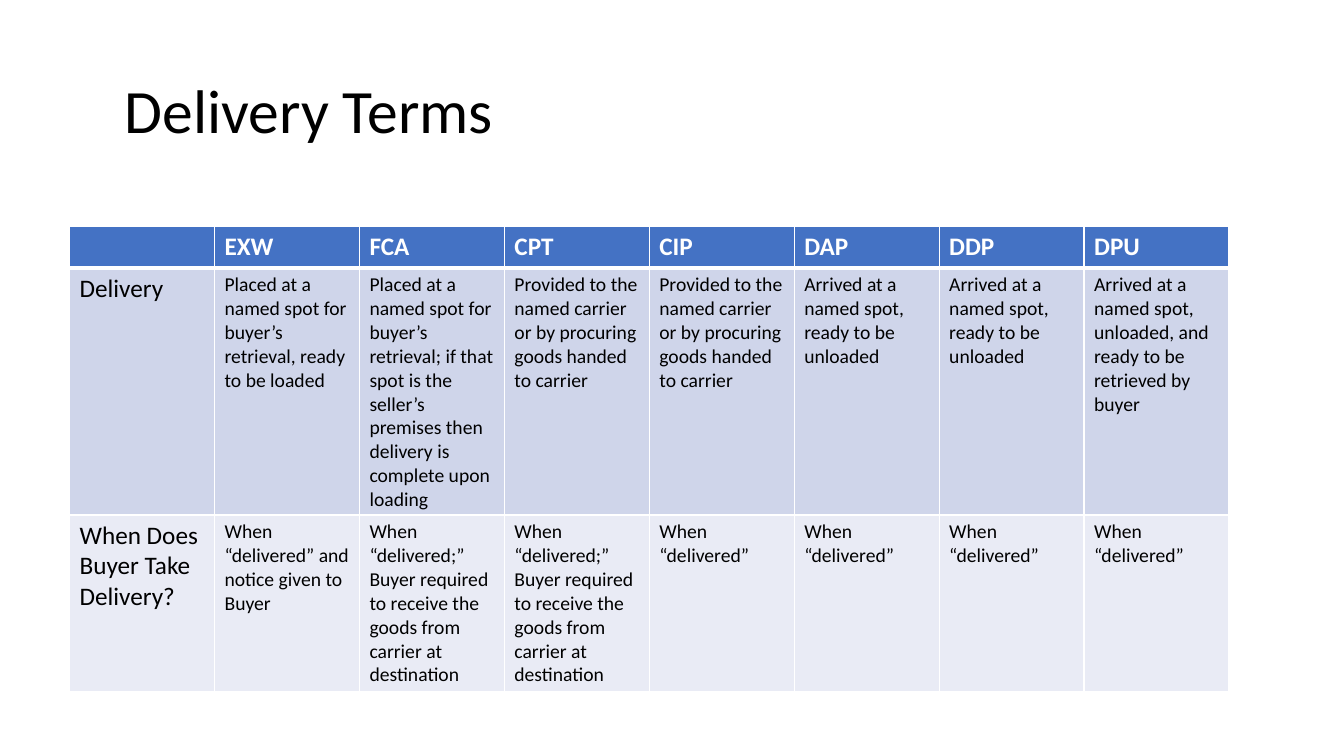
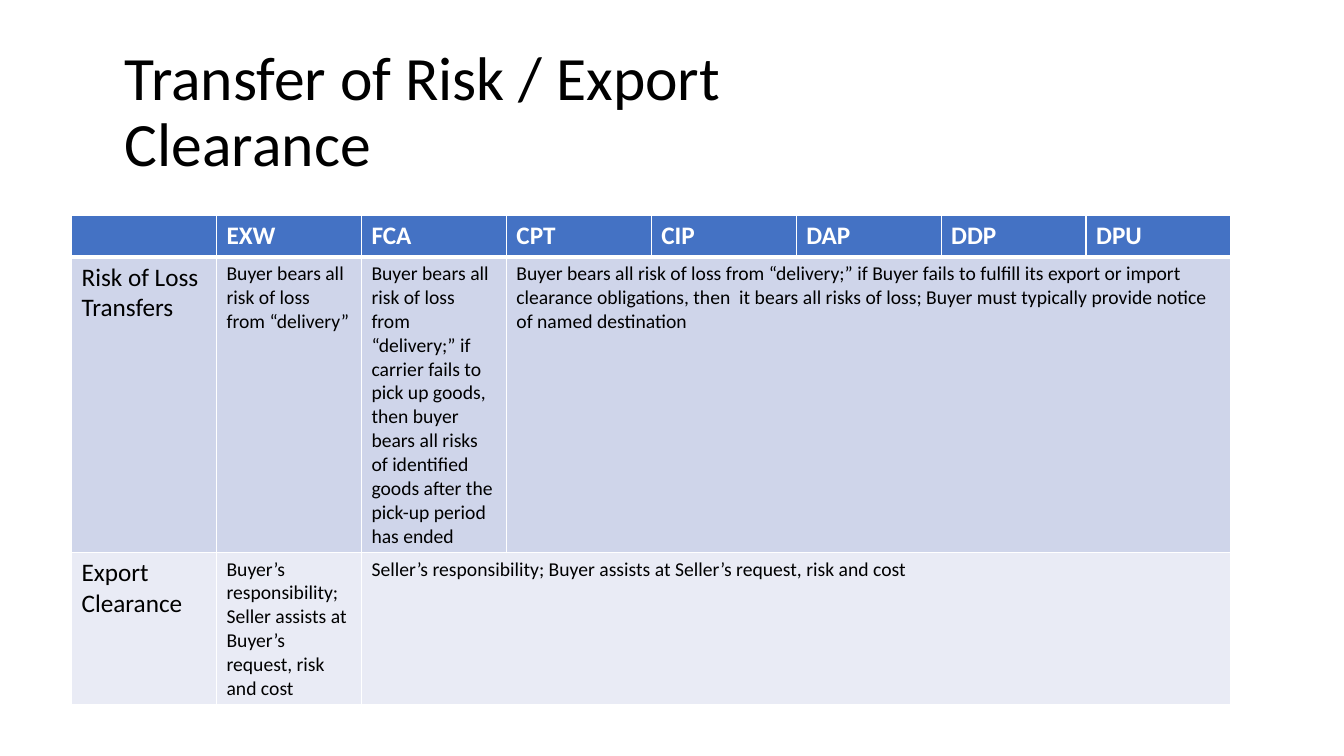
from lxml.etree import SubElement
from pptx import Presentation
from pptx.dml.color import RGBColor
from pptx.enum.text import MSO_ANCHOR
from pptx.oxml.ns import qn
from pptx.util import Inches, Pt

FONT = "Calibri"
BLACK, WHITE = "000000", "FFFFFF"
ROW_FILLS = ["4472C4", "CFD5EA", "E9EBF5"]
TERMS = ["", "EXW", "FCA", "CPT", "CIP", "DAP", "DDP", "DPU"]
COL_WIDTH = 11.5 / len(TERMS)
HEADER_HEIGHT = 0.41

CARRIER = "Provided to the named carrier or by procuring goods handed to carrier"
ARRIVED = "Arrived at a named spot, ready to be unloaded"
RECEIVE = ("When “delivered;” Buyer required to receive the goods "
           "from carrier at destination")

DELIVERY_ROWS = [
    ["Delivery",
     "Placed at a named spot for buyer’s retrieval, ready to be loaded",
     "Placed at a named spot for buyer’s retrieval; if that spot is the "
     "seller’s premises then delivery is complete upon loading",
     CARRIER, CARRIER, ARRIVED, ARRIVED,
     "Arrived at a named spot, unloaded, and ready to be retrieved by buyer"],
    ["When Does Buyer Take Delivery?",
     "When “delivered” and notice given to Buyer",
     RECEIVE, RECEIVE] + ["When “delivered”"] * 4,
]

RISK_ROWS = [
    ["Risk of Loss Transfers",
     "Buyer bears all risk of loss from “delivery”",
     "Buyer bears all risk of loss from “delivery;” if carrier fails to pick "
     "up goods, then buyer bears all risks of identified goods after the "
     "pick-up period has ended",
     "Buyer bears all risk of loss from “delivery;” if Buyer fails to fulfill "
     "its export or import clearance obligations, then  it bears all risks of "
     "loss; Buyer must typically provide notice of named destination"],
    ["Export Clearance",
     "Buyer’s responsibility; Seller assists at Buyer’s request, risk and cost",
     "Seller’s responsibility; Buyer assists at Seller’s request, risk and cost"],
]


def rgb(color):
    return RGBColor.from_string(color)


def write(tf, text, size, color=BLACK, bold=False, spacing=1.0):
    p = tf.paragraphs[0]
    p.line_spacing = spacing
    r = p.add_run()
    r.text = text
    r.font.name, r.font.size, r.font.bold = FONT, Pt(size), bold
    r.font.color.rgb = rgb(color)


def add_title(s, text, width):
    tf = s.shapes.add_textbox(Inches(1.14), Inches(0.4),
                              Inches(width), Inches(1.45)).text_frame
    tf.word_wrap = True
    tf.vertical_anchor = MSO_ANCHOR.MIDDLE
    write(tf, text, 44, spacing=0.9)


def style_cell(cell, row):
    tc_pr = cell._tc.get_or_add_tcPr()
    widths = {"L": 1, "R": 1, "T": 3 if row == 1 else 1, "B": 3 if row == 0 else 1}
    for side, width in widths.items():
        ln = SubElement(tc_pr, qn(f"a:ln{side}"), w=str(Pt(width)))
        fill = SubElement(ln, qn("a:solidFill"))
        SubElement(fill, qn("a:srgbClr"), val=WHITE)
    cell.fill.solid()
    cell.fill.fore_color.rgb = rgb(ROW_FILLS[row])


def add_terms_table(s, left, top, body, heights):
    rows = [TERMS] + body
    heights = [HEADER_HEIGHT] + heights
    table = s.shapes.add_table(len(rows), len(TERMS), Inches(left), Inches(top),
                               Inches(COL_WIDTH * len(TERMS)),
                               Inches(sum(heights))).table
    for col in table.columns:
        col.width = Inches(COL_WIDTH)
    for i, (texts, height) in enumerate(zip(rows, heights)):
        table.rows[i].height = Inches(height)
        for cell in table.rows[i].cells:
            style_cell(cell, i)
        if len(texts) < len(TERMS):
            table.cell(i, len(texts) - 1).merge(table.cell(i, len(TERMS) - 1))
        for j, text in enumerate(texts):
            if text:
                write(table.cell(i, j).text_frame, text,
                      18 if i == 0 or j == 0 else 14,
                      color=BLACK if i else WHITE, bold=i == 0)


def add_terms_slide(prs, title, title_width, left, top, body, heights):
    s = prs.slides.add_slide(prs.slide_layouts[6])
    add_title(s, title, title_width)
    add_terms_table(s, left, top, body, heights)


def main():
    prs = Presentation()
    prs.slide_width, prs.slide_height = Inches(13.33), Inches(7.5)
    add_terms_slide(prs, "Delivery Terms", 9.97, 0.69, 2.25,
                    DELIVERY_ROWS, [2.45, 1.75])
    add_terms_slide(prs, "Transfer of Risk / Export Clearance", 7.79, 0.71, 2.14,
                    RISK_ROWS, [2.93, 1.51])
    prs.save("out.pptx")


if __name__ == "__main__":
    main()
